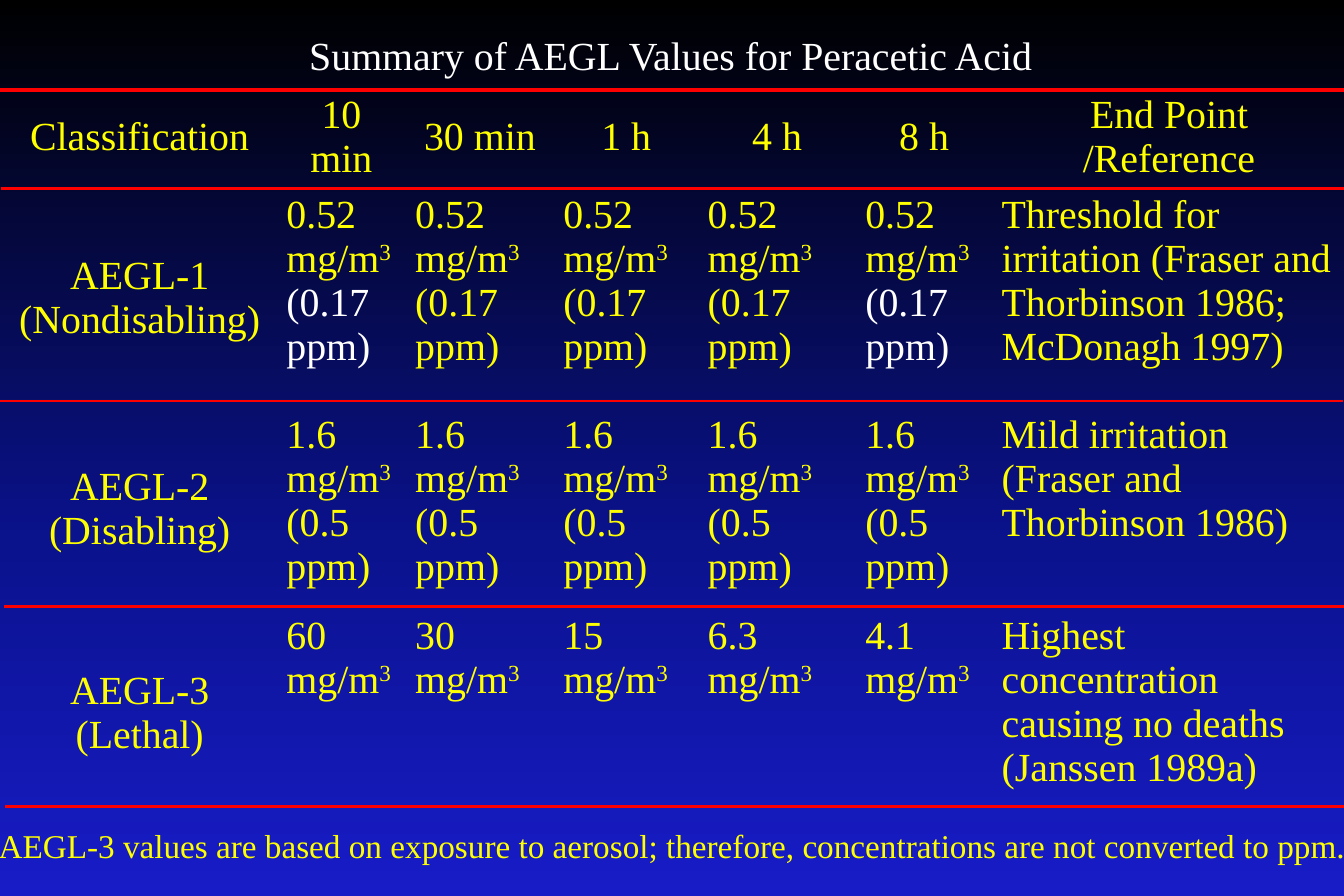
from copy import deepcopy

from pptx import Presentation
from pptx.dml.color import RGBColor
from pptx.enum.shapes import MSO_CONNECTOR as Link
from pptx.enum.text import MSO_ANCHOR as Anchor, MSO_AUTO_SIZE as Fit, PP_ALIGN as Align
from pptx.oxml.ns import qn
from pptx.oxml.xmlchemy import OxmlElement as Element
from pptx.util import Cm, Pt

YELLOW = RGBColor(0xFF, 0xFF, 0x00)
WHITE = RGBColor(0xFF, 0xFF, 0xFF)
RED = RGBColor(0xFF, 0x00, 0x00)
FONT = "Times New Roman"
PLAIN = "{2D5ABB26-0587-4C30-8999-92F81FD0307C}"  # table style without lines

SKY = [(0, RGBColor(0, 0, 0)), (0.6, RGBColor(0x0A, 0x12, 0x8C)),
       (1, RGBColor(0x18, 0x1C, 0xC7))]
TITLE = "Summary of AEGL Values for Peracetic Acid"
NOTE = ("AEGL-3 values are based on exposure to aerosol; "
        "therefore, concentrations are not converted to ppm.")
HEAD = ["Classification", "10 min", "30 min", "1 h", "4 h", "8 h",
        "End Point /Reference"]
# level, mg/m3 by time, ppm, end point
LEVELS = [
    ("AEGL-1 (Nondisabling)", ["0.52"] * 5, " (0.17 ppm)",
     "Threshold for irritation (Fraser and Thorbinson 1986; McDonagh 1997)"),
    ("AEGL-2 (Disabling)", ["1.6"] * 5, " (0.5 ppm)",
     "Mild irritation (Fraser and Thorbinson 1986)"),
    ("AEGL-3 (Lethal)", ["60", "30", "15", "6.3", "4.1"], "",
     "Highest concentration causing no deaths (Janssen 1989a)"),
]
PALE = {(1, 1), (1, 5)}  # cells with ppm in white
WIDTHS = [5.84, 2.74, 3.15, 3.07, 3.35, 2.9, 7.52]
HEIGHTS = [2.21, 4.67, 4.27, 4.42]
WIDE = 28.58
# left, top, weight
RULES = [(0, 1.91, 2.25), (0.1, 17.15, 2.25), (0.03, 4.01, 2.25),
         (-0.03, 8.53, 1.5), (0.08, 12.9, 1.5)]


def style(para, size, color, align):
    para.alignment = align
    para.font.name, para.font.size = FONT, Pt(size)
    para.font.color.rgb = color


def paint(slide):
    """Fill the background with the sky gradient, dark at the top."""
    fill = slide.background.fill
    fill.gradient()
    fill.gradient_angle = 270
    stops = slide.element.find(".//" + qn("a:gsLst"))
    stops.append(deepcopy(stops[0]))
    for stop, (place, color) in zip(fill.gradient_stops, SKY):
        stop.position, stop.color.rgb = place, color


def fill_cell(cell, parts, mid, pale):
    """Write parts as runs; the second is raised, the third may be white."""
    cell.fill.background()
    cell.margin_left = cell.margin_right = Cm(0.2)
    cell.margin_top = cell.margin_bottom = Cm(0.1)
    cell.vertical_anchor = Anchor.MIDDLE if mid else Anchor.TOP
    para = cell.text_frame.paragraphs[0]
    style(para, 24, YELLOW, Align.CENTER if mid else Align.LEFT)
    for i, part in enumerate(parts):
        run = para.add_run()
        run.text = part
        if i == 1:
            run.font._element.set("baseline", "30000")
        if i == 2 and pale:
            run.font.color.rgb = WHITE


def add_grid(slide):
    rows = [[[name] for name in HEAD]]
    for level, doses, ppm, end in LEVELS:
        values = [[dose + " mg/m", "3"] + ([ppm] if ppm else []) for dose in doses]
        rows.append([[level], *values, [end]])
    frame = slide.shapes.add_table(len(rows), len(HEAD), Cm(0.05), Cm(1.8),
                                   Cm(sum(WIDTHS)), Cm(sum(HEIGHTS)))
    table = frame.table
    table.first_row = table.horz_banding = False
    frame.element.find(".//" + qn("a:tableStyleId")).text = PLAIN
    for col, width in zip(table.columns, WIDTHS):
        col.width = Cm(width)
    for row, height in zip(table.rows, HEIGHTS):
        row.height = Cm(height)
    for r, row in enumerate(rows):
        for c, parts in enumerate(row):
            fill_cell(table.cell(r, c), parts, r == 0 or c == 0, (r, c) in PALE)


def add_label(slide, text, box, size, color, align):
    frame = slide.shapes.add_textbox(*map(Cm, box)).text_frame
    frame.word_wrap = False
    frame.auto_size = Fit.SHAPE_TO_FIT_TEXT
    para = frame.paragraphs[0]
    para.text = text
    style(para, size, color, align)
    return frame


def add_rule(slide, left, top, weight):
    line = slide.shapes.add_connector(Link.STRAIGHT, Cm(left), Cm(top),
                                      Cm(left + WIDE), Cm(top))
    line.line.color.rgb, line.line.width = RED, Pt(weight)
    line.element.spPr.append(Element("a:effectLst"))


def main():
    deck = Presentation()
    deck.slide_width, deck.slide_height = Cm(WIDE), Cm(19.05)
    slide = deck.slides.add_slide(deck.slide_layouts[6])
    paint(slide)
    add_grid(slide)
    note = add_label(slide, NOTE, (-0.69, 17.55, 29.95, 1.07), 20, YELLOW, Align.LEFT)
    note.vertical_anchor = Anchor.MIDDLE
    note.margin_left, note.margin_right = Cm(0.66), Cm(0.43)
    note.margin_top, note.margin_bottom = 0, Cm(0.23)
    add_label(slide, TITLE, (6.25, 0.53, 16.03, 1.27), 24, WHITE, Align.CENTER)
    for rule in RULES:
        add_rule(slide, *rule)
    deck.save("out.pptx")


if __name__ == "__main__":
    main()
